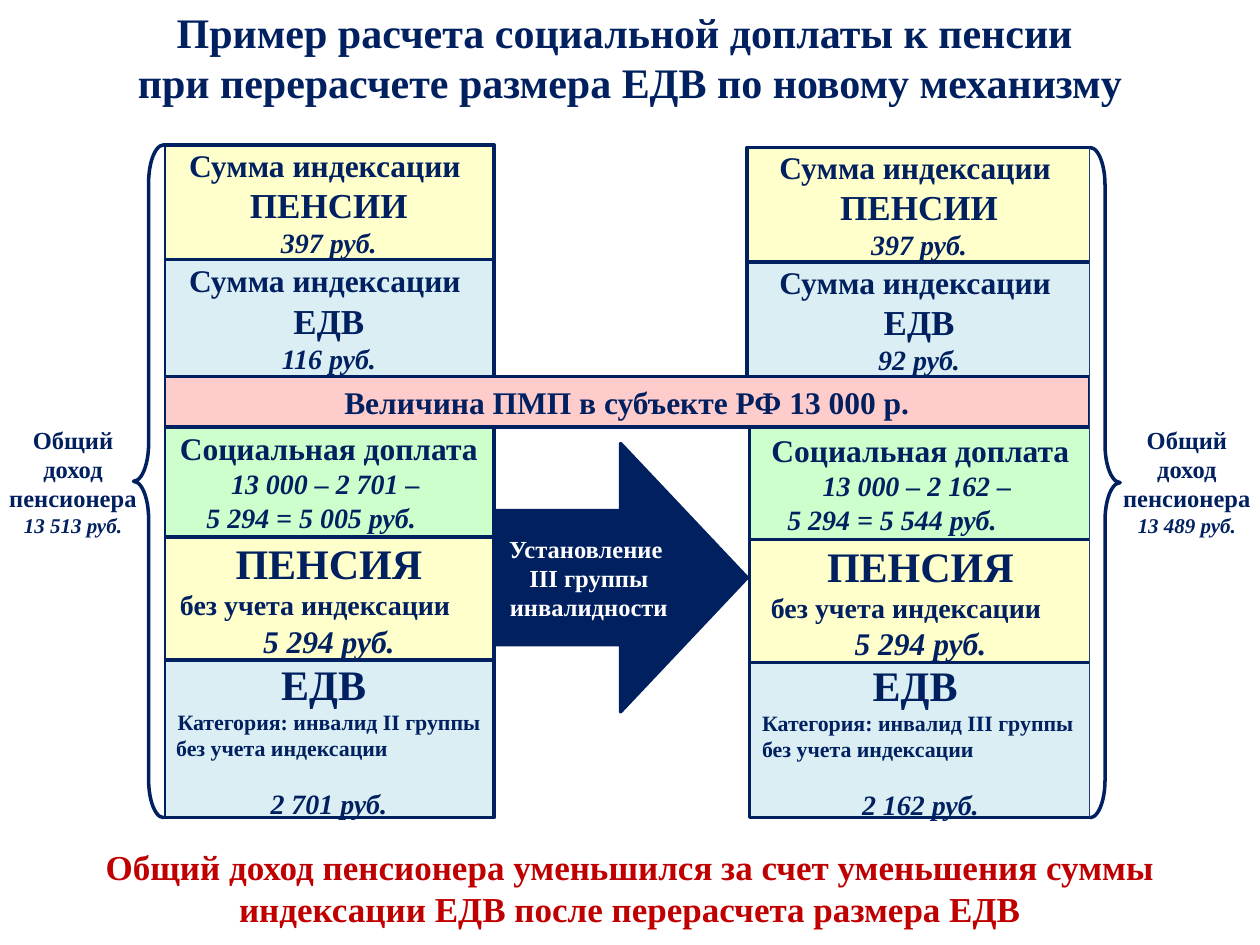
from dataclasses import dataclass

from pptx import Presentation
from pptx.dml.color import RGBColor
from pptx.enum.shapes import MSO_SHAPE
from pptx.enum.text import MSO_ANCHOR, MSO_AUTO_SIZE, PP_ALIGN
from pptx.util import Inches, Pt


@dataclass(frozen=True)
class Theme:
    font: str = "Times New Roman"
    navy: str = "002060"
    red: str = "C00000"
    white: str = "FFFFFF"
    cream: str = "FFFFCC"
    blue: str = "DBEEF4"
    green: str = "CCFFCC"
    pink: str = "FFCCCC"
    head: float = 24
    large: float = 20
    main: float = 18
    sum: float = 16
    label: float = 14
    note: float = 12
    fine: float = 12.5
    line: float = 2


@dataclass(frozen=True)
class Line:
    """One paragraph; a given indent (in columns) aligns it left."""
    text: str
    size: float
    slant: bool = False
    indent: float = None
    gap: float = 0


class Page:
    """A slide on a grid of 100 columns by 75 rows."""

    def __init__(self, deck, theme):
        self.theme = theme
        self.wide, self.high = deck.slide_width / 100, deck.slide_height / 75
        self.slide = deck.slides.add_slide(deck.slide_layouts[5])

    def place(self, left, top, width, height):
        return (round(left * self.wide), round(top * self.high),
                round(width * self.wide), round(height * self.high))

    def letter(self, shape, lines, color, anchor):
        """Set the lines of text in a shape, run by run."""
        frame = shape.text_frame
        frame.word_wrap = True
        frame.auto_size = MSO_AUTO_SIZE.NONE
        frame.vertical_anchor = anchor
        for at, line in enumerate(lines):
            para = frame.add_paragraph() if at else frame.paragraphs[0]
            para.alignment = PP_ALIGN.CENTER
            if line.indent is not None:
                para.alignment = PP_ALIGN.LEFT
                para._p.get_or_add_pPr().set("marL", str(round(line.indent * self.wide)))
            para.space_before = Pt(line.gap)
            run = para.add_run()
            run.text = line.text
            font = run.font
            font.name, font.size = self.theme.font, Pt(line.size)
            font.bold, font.italic = True, line.slant
            font.color.rgb = RGBColor.from_string(color)

    def title(self, spot, lines):
        shape = self.slide.shapes.title
        shape.left, shape.top, shape.width, shape.height = self.place(*spot)
        self.letter(shape, lines, self.theme.navy, MSO_ANCHOR.TOP)

    def text(self, spot, lines, color):
        shape = self.slide.shapes.add_textbox(*self.place(*spot))
        self.letter(shape, lines, color, MSO_ANCHOR.TOP)

    def form(self, kind, spot, fill):
        shape = self.slide.shapes.add_shape(kind, *self.place(*spot))
        shape.shadow.inherit = False
        shape.fill.solid()
        shape.fill.fore_color.rgb = RGBColor.from_string(fill)
        shape.line.color.rgb = RGBColor.from_string(self.theme.navy)
        shape.line.width = Pt(self.theme.line)
        return shape

    def box(self, spot, fill, lines):
        shape = self.form(MSO_SHAPE.RECTANGLE, spot, fill)
        self.letter(shape, lines, self.theme.navy, MSO_ANCHOR.MIDDLE)

    def arrow(self, spot, lines):
        shape = self.form(MSO_SHAPE.RIGHT_ARROW, spot, self.theme.navy)
        self.letter(shape, lines, self.theme.white, MSO_ANCHOR.MIDDLE)

    def brace(self, spot, turn=0):
        shape = self.form(MSO_SHAPE.LEFT_BRACE, spot, self.theme.white)
        shape.adjustments[0], shape.adjustments[1] = 1.25, 0.5
        shape.rotation = turn

    def stack(self, left, width, top, parts):
        """Pile boxes downwards; each part is (height, fill, lines)."""
        for height, fill, lines in parts:
            self.box((left, top, width, height), fill, lines)
            top += height


@dataclass(frozen=True)
class Case:
    """One column: figures before or after the change of group."""
    upper: tuple
    lower: tuple
    rise: str
    minus: str
    extra: str
    group: str
    paid: str
    heights: tuple
    indents: tuple


CASES = (
    Case((13, 26.2, 11.5), (13, 26.2, 33.8), "116 руб.",
         "13 000 – 2 701 – ", "5 294 = 5 005 руб.", "II", "2 701 руб.",
         (9.1, 9.3, 8.8, 9.8, 12.5), (2.4, 0.3)),
    Case((59.3, 27.3, 11.7), (59.5, 27.1, 33.9), "92 руб.",
         "13 000 – 2 162 – ", "5 294 = 5 544 руб.", "III", "2 162 руб.",
         (9.1, 9.1, 8.9, 9.8, 12.3), (2, 0.7)),
)


def column(page, case):
    look = page.theme
    gain, bonus, base, pay, aid = case.heights
    shift, inset = case.indents
    rise = Line("Сумма индексации ", look.main)
    page.stack(*case.upper, (
        (gain, look.cream, (rise, Line("ПЕНСИИ", look.large),
                            Line("397 руб.", look.sum, True))),
        (bonus, look.blue, (rise, Line("ЕДВ", look.large),
                            Line(case.rise, look.sum, True))),
    ))
    page.stack(*case.lower, (
        (base, look.green, (Line("Социальная доплата", look.main),
                            Line(case.minus, look.sum, True),
                            Line(case.extra, look.sum, True, shift))),
        (pay, look.cream, (Line("ПЕНСИЯ", look.head),
                           Line("без учета индексации", look.sum, indent=inset),
                           Line("5 294 руб.", look.main, True))),
        (aid, look.blue, (Line("ЕДВ ", look.head),
                          Line(f"Категория: инвалид {case.group} группы ", look.fine),
                          Line("без учета индексации", look.fine, indent=0),
                          Line(case.paid, look.sum, True, gap=14.4))),
    ))


def main():
    deck = Presentation()
    deck.slide_width, deck.slide_height = Inches(10), Inches(7.5)
    look = Theme()
    page = Page(deck, look)
    page.title((0, 0, 100, 9.1), (
        Line("Пример расчета социальной доплаты к пенсии ", look.head),
        Line("при перерасчете размера ЕДВ по новому механизму", look.head)))
    for case in CASES:
        column(page, case)
    page.box((13, 29.9, 73.5, 4), look.pink,
             [Line("Величина ПМП в субъекте РФ 13 000 р.", look.main)])
    page.arrow((39.2, 35.2, 20.1, 21.3), (
        Line("Установление ", look.label),
        Line("III группы инвалидности", look.label)))
    page.brace((86.5, 11.7, 2.4, 53.2), 180)
    page.brace((10.6, 11.5, 2.4, 53.4))
    for left, total in ((-0.4, "13 513 руб."), (88, "13 489 руб.")):
        page.text((left, 33.2, 12.4, 10.1), (
            Line("Общий доход пенсионера", look.label),
            Line(total, look.note, True)), look.navy)
    page.text((0, 66.6, 100, 7.7), [Line(
        "Общий доход пенсионера уменьшился за счет уменьшения суммы "
        "индексации ЕДВ после перерасчета размера ЕДВ", look.large)], look.red)
    deck.save("out.pptx")


if __name__ == "__main__":
    main()
